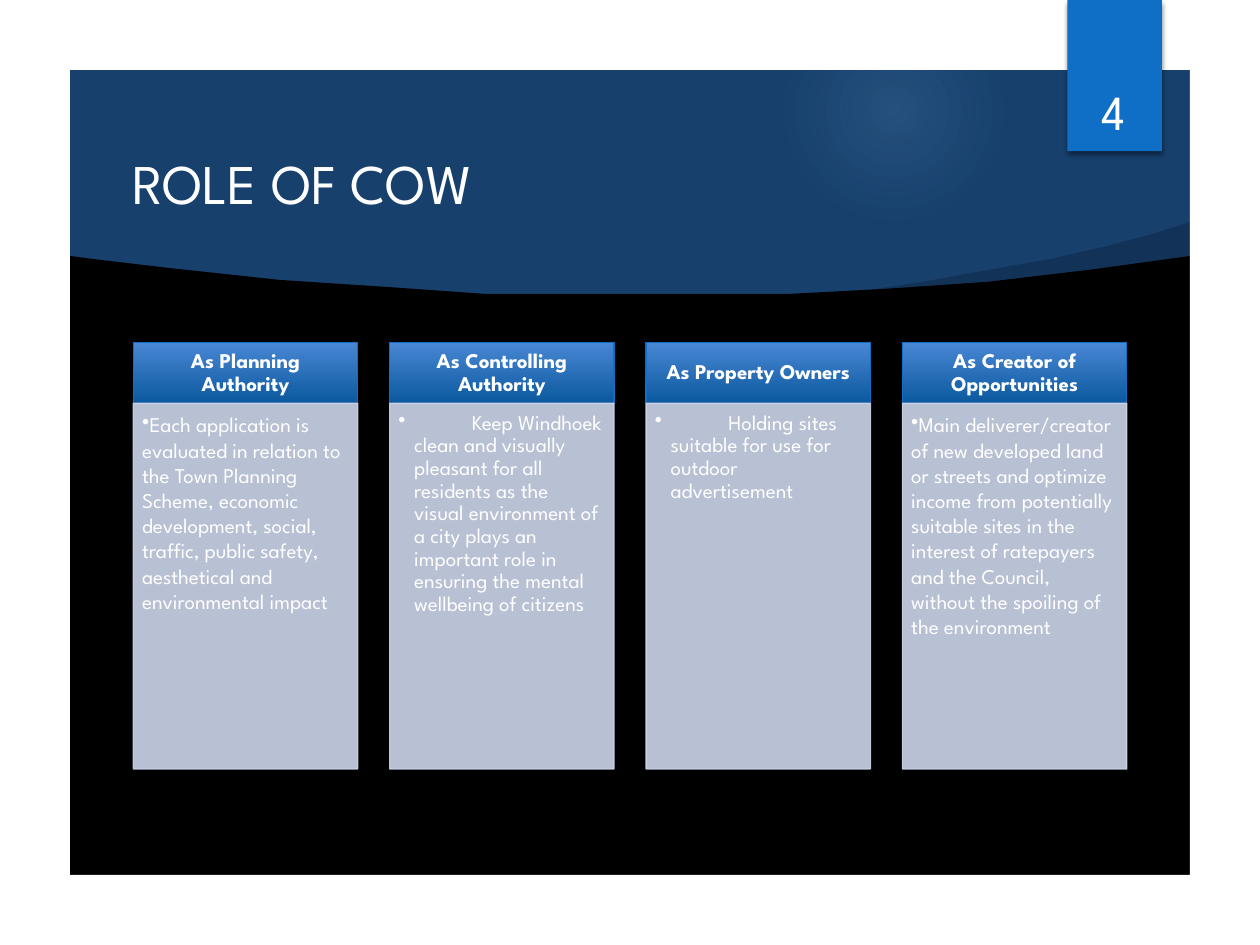
import pptx
import pptx.util
import pptx.dml.color
import pptx.enum.shapes
import pptx.enum.text
import pptx.oxml
import pptx.oxml.ns

Pt = pptx.util.Pt
RGBColor = pptx.dml.color.RGBColor
MSO_SHAPE = pptx.enum.shapes.MSO_SHAPE
PP_ALIGN = pptx.enum.text.PP_ALIGN
MSO_ANCHOR = pptx.enum.text.MSO_ANCHOR
qn = pptx.oxml.ns.qn

FONT = "League Spartan"
NAVY = RGBColor(0x17, 0x40, 0x6D)
BLACK = RGBColor(0, 0, 0)
WHITE = RGBColor(0xFF, 0xFF, 0xFF)
BLUE = RGBColor(0x0F, 0x6F, 0xC6)
HEADER_TOP = RGBColor(0x47, 0x86, 0xD3)
HEADER_BOTTOM = RGBColor(0x0C, 0x59, 0x9F)
PANEL = RGBColor(0xCC, 0xD5, 0xEA)
GLOW = RGBColor(0x82, 0xB1, 0xE5)

TITLE = "ROLE OF COW"
PAGE_NUMBER = "4"
ROLES = [
    ("As Planning Authority",
     "Each application is evaluated in relation to the Town Planning Scheme, economic "
     "development, social, traffic, public safety, aesthetical and environmental impact",
     False),
    ("As Controlling Authority",
     "Keep Windhoek clean and visually pleasant for all residents as the visual environment "
     "of a city plays an important role in ensuring the mental wellbeing of citizens",
     True),
    ("As Property Owners",
     "Holding sites suitable for use for outdoor advertisement",
     True),
    ("As Creator of Opportunities",
     "Main deliverer/creator of new developed land or streets and optimize income from "
     "potentially suitable sites in the interest of ratepayers and the Council, without the "
     "spoiling of the environment",
     False),
]

GLOW_STOPS = [(0, 14), (36, 7), (73, 0)]
WEDGE = [(503, 168.5), (535, 168), (612, 158), (688, 150), (685, 125.3), (661, 133),
         (631, 141), (600, 148), (566, 154.5), (533, 160), (501, 165)]
CURVE = [(38, 146), (53, 148), (95, 153), (160, 160), (221, 164), (278, 167.5), (341, 168.5),
         (395, 168.5), (450, 167.5), (507, 165), (565, 161), (624, 154.5), (682, 146)]
FRAME_OUTER = [(0, 0), (0, 540), (720, 540), (720, 0)]
FRAME_INNER = [(680.4, 500.4), (680.4, 40.3), (40.3, 40.3), (40.3, 500.4)]

COLUMN_LEFT, COLUMN_PITCH, COLUMN_WIDTH = 76.2, 146.5, 128.2
HEADER_Y, HEADER_HEIGHT, BODY_HEIGHT = 195.8, 34.6, 209


def set_opacity(color_element, percent):
    alpha = color_element.makeelement(qn("a:alpha"), {"val": str(percent * 1000)})
    color_element.append(alpha)


def paint(shape, color, opacity=100):
    shape.shadow.inherit = False
    shape.fill.solid()
    shape.fill.fore_color.rgb = color
    shape.line.fill.background()
    if opacity < 100:
        set_opacity(shape.fill._xPr.find(".//" + qn("a:srgbClr")), opacity)


def add_rectangle(shapes, box, color, opacity=100):
    shape = shapes.add_shape(MSO_SHAPE.RECTANGLE, *map(Pt, box))
    paint(shape, color, opacity)
    return shape


def add_outline(shapes, contours, color, opacity=100):
    builder = shapes.build_freeform(*contours[0][0], scale=Pt(1))
    for index, contour in enumerate(contours):
        if index:
            builder.move_to(*contour[0])
        builder.add_line_segments(contour[1:], close=True)
    paint(builder.convert_to_shape(), color, opacity)


def add_drop_shadow(shape):
    effects = shape._element.spPr.find(qn("a:effectLst"))
    effects.append(pptx.oxml.parse_xml(
        f'<a:outerShdw {pptx.oxml.ns.nsdecls("a")} blurRad="{Pt(3)}" dist="{Pt(2)}" '
        'dir="5400000" rotWithShape="0"><a:srgbClr val="000000">'
        '<a:alpha val="45000"/></a:srgbClr></a:outerShdw>'))


def add_glow(shapes, left, top, size):
    shape = shapes.add_shape(MSO_SHAPE.OVAL, Pt(left), Pt(top), Pt(size), Pt(size))
    paint(shape, GLOW)
    stops = "".join(
        f'<a:gs pos="{position * 1000}"><a:srgbClr val="{GLOW}">'
        f'<a:alpha val="{opacity * 1000}"/></a:srgbClr></a:gs>'
        for position, opacity in GLOW_STOPS)
    gradient = pptx.oxml.parse_xml(
        f'<a:gradFill {pptx.oxml.ns.nsdecls("a")}><a:gsLst>{stops}</a:gsLst>'
        '<a:path path="circle"><a:fillToRect l="50000" t="50000" r="50000" b="50000"/>'
        '</a:path></a:gradFill>')
    properties = shape._element.spPr
    properties.replace(properties.find(qn("a:solidFill")), gradient)


def write_text(shape, text, size=12, bold=False, align=PP_ALIGN.LEFT, anchor=MSO_ANCHOR.MIDDLE,
               insets=(7.2, 3.6, 7.2, 3.6), line_spacing=None, bullet=False, hanging=0, tab=0):
    frame = shape.text_frame
    frame.word_wrap = True
    frame.vertical_anchor = anchor
    frame.margin_left, frame.margin_top, frame.margin_right, frame.margin_bottom = map(Pt, insets)
    paragraph = frame.paragraphs[0]
    paragraph.text = text
    paragraph.alignment = align
    if line_spacing:
        paragraph.line_spacing = line_spacing
    if bullet:
        properties = paragraph._p.get_or_add_pPr()
        properties.set("marL", str(Pt(hanging)))
        properties.set("indent", str(-Pt(hanging)))
        properties.append(properties.makeelement(qn("a:buChar"), {"char": "•"}))
        if tab:
            tabs = properties.makeelement(qn("a:tabLst"), {})
            tabs.append(tabs.makeelement(qn("a:tab"), {"pos": str(Pt(tab)), "algn": "l"}))
            properties.append(tabs)
    font = paragraph.runs[0].font
    font.name, font.size, font.bold = FONT, Pt(size), bold
    font.color.rgb = WHITE


def add_role(shapes, left, heading, description, indented):
    header = add_rectangle(shapes, (left, HEADER_Y, COLUMN_WIDTH, HEADER_HEIGHT), BLUE)
    header.fill.gradient()
    header.fill.gradient_angle = 270
    for stop, position, color in zip(header.fill.gradient_stops, (0, 1),
                                     (HEADER_TOP, HEADER_BOTTOM)):
        stop.position = position
        stop.color.rgb = color
    header.line.color.rgb = BLUE
    header.line.width = Pt(0.75)
    add_drop_shadow(header)
    write_text(header, heading, bold=True, align=PP_ALIGN.CENTER,
               insets=(6.7, 3.8, 6.7, 3.8), line_spacing=0.9)

    body_y = HEADER_Y + HEADER_HEIGHT
    body = add_rectangle(shapes, (left, body_y, COLUMN_WIDTH, BODY_HEIGHT), PANEL, 90)
    body.line.color.rgb = PANEL
    body.line.width = Pt(0.75)
    set_opacity(body.line._ln.find(".//" + qn("a:srgbClr")), 90)
    layout = dict(line_spacing=0.9, hanging=9, tab=42) if indented else {}
    write_text(body, "\t" + description if indented else description, anchor=MSO_ANCHOR.TOP,
               insets=(5, 5, 6.7, 7.5), bullet=True, **layout)


def main():
    presentation = pptx.Presentation()
    presentation.slide_width, presentation.slide_height = Pt(720), Pt(540)
    slide = presentation.slides.add_slide(presentation.slide_layouts[6])
    slide.background.fill.solid()
    slide.background.fill.fore_color.rgb = NAVY
    shapes = slide.shapes

    add_glow(shapes, 448, 0, 126)
    add_outline(shapes, [WEDGE], BLACK, 20)
    add_outline(shapes, [CURVE + [(682, 503), (38, 503)]], BLACK)
    add_outline(shapes, [FRAME_OUTER, FRAME_INNER], WHITE)
    ribbon = add_rectangle(shapes, (610, 0, 54, 86.4), BLUE)
    add_drop_shadow(ribbon)

    title = shapes.add_textbox(Pt(68.4), Pt(76.3), Pt(517.7), Pt(55.4))
    write_text(title, TITLE, size=32)
    for index, role in enumerate(ROLES):
        add_role(shapes, COLUMN_LEFT + index * COLUMN_PITCH, *role)
    number = shapes.add_textbox(Pt(611.3), Pt(23), Pt(49.7), Pt(60.5))
    write_text(number, PAGE_NUMBER, size=28, align=PP_ALIGN.CENTER, anchor=MSO_ANCHOR.BOTTOM)

    presentation.save("out.pptx")


if __name__ == "__main__":
    main()
